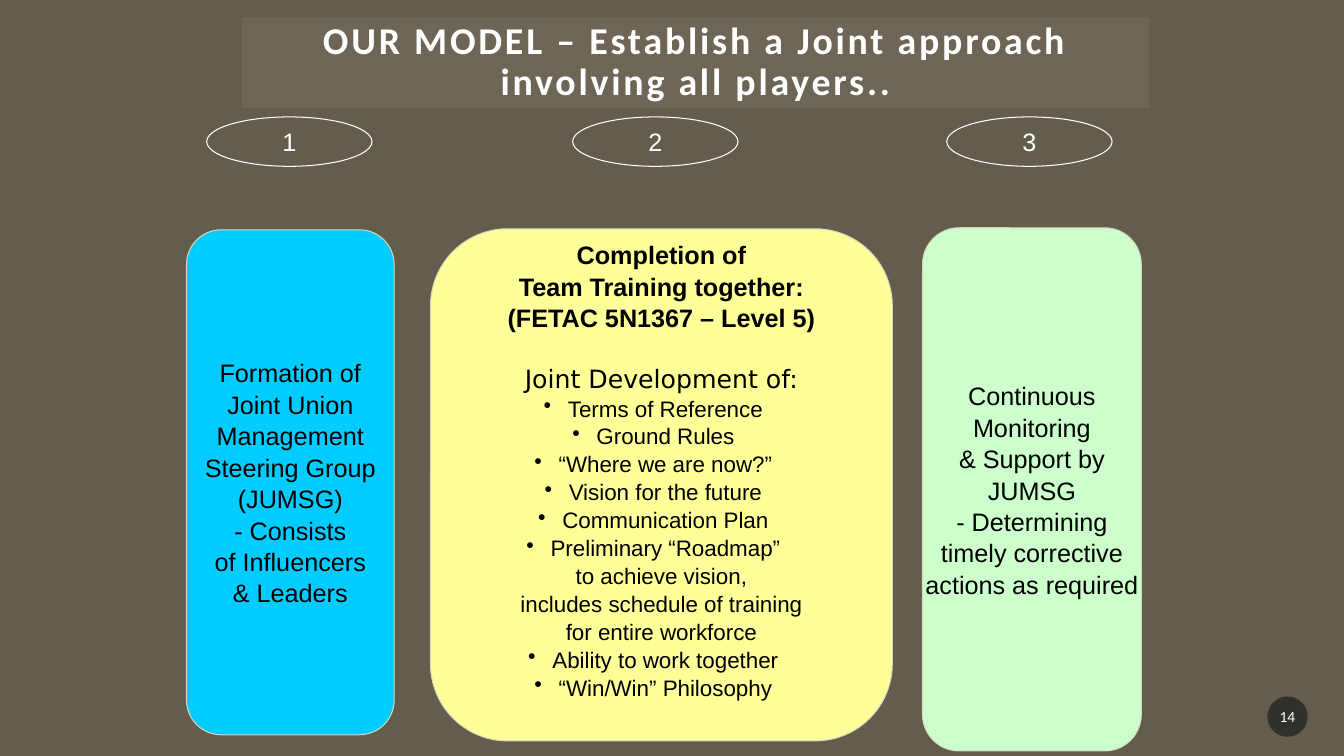
from lxml.etree import SubElement
from pptx import Presentation
from pptx.dml.color import RGBColor
from pptx.enum.shapes import MSO_SHAPE as Shape
from pptx.enum.text import MSO_ANCHOR as Anchor, MSO_AUTO_SIZE as AutoSize, PP_ALIGN as Align
from pptx.oxml.ns import qn
from pptx.util import Inches, Pt

OLIVE = RGBColor(0x63, 0x5D, 0x4D)
SAND = RGBColor(0xA7, 0xA0, 0x8E)
CREAM = RGBColor(0xD8, 0xD6, 0xBA)
BLUE = RGBColor(0x00, 0xCC, 0xFF)
YELLOW = RGBColor(0xFF, 0xFF, 0x99)
GREEN = RGBColor(0xCC, 0xFF, 0xCC)
CHARCOAL = RGBColor(0x1D, 0x1D, 0x1D)
WHITE = RGBColor(0xFF, 0xFF, 0xFF)
BLACK = RGBColor(0x00, 0x00, 0x00)

FORMATION = ["Formation of", "Joint Union", "Management", "Steering Group", "(JUMSG)",
             "- Consists", "of Influencers", "& Leaders"]
TRAINING = ["Completion of", "Team Training together:", "(FETAC 5N1367 – Level 5)"]
# Each topic is followed by the lines that continue it without a bullet
TOPICS = [
    ["Terms of Reference"],
    ["Ground Rules"],
    ["“Where we are now?”"],
    ["Vision for the future"],
    ["Communication Plan"],
    ["Preliminary “Roadmap”", "to achieve vision,", "includes schedule of training",
     "for entire workforce"],
    ["Ability to work together"],
    ["“Win/Win” Philosophy"],
]
MONITORING = ["Continuous", "Monitoring", "& Support by", "JUMSG", "- Determining",
              "timely corrective", "actions as required"]


def set_fill(shape, color, alpha=None):
    shape.fill.solid()
    shape.fill.fore_color.rgb = color
    if alpha is not None:
        tint = shape.fill._xPr.find(qn("a:solidFill"))[0]
        SubElement(tint, qn("a:alpha")).set("val", str(alpha * 1000))


def add_text(frame, text, size=18, font="Arial", color=BLACK, bold=False, bullet=False,
             before=0, line_spacing=1.04, tracking=None):
    """Write one centred paragraph, using the empty first one if it is free."""
    first = frame.paragraphs[0]
    para = frame.add_paragraph() if first.runs else first
    if bullet:
        properties = para._p.get_or_add_pPr()
        properties.set("marL", str(Inches(0.08)))
        properties.set("indent", str(Inches(-0.24)))
        SubElement(properties, qn("a:buChar")).set("char", "•")
    para.alignment = Align.CENTER
    para.line_spacing = line_spacing
    para.space_before = Pt(before)
    span = para.add_run()
    span.text = text
    span.font.size = Pt(size)
    span.font.name = font
    span.font.bold = bold
    span.font.color.rgb = color
    if tracking:
        span._r.get_or_add_rPr().set("spc", str(tracking * 100))


def add_panel(page, kind, box, fill, line=None, alpha=None):
    """Add a filled shape and return its text frame."""
    panel = page.shapes.add_shape(kind, *map(Inches, box))
    panel.shadow.inherit = False
    set_fill(panel, fill, alpha)
    if line is None:
        panel.line.fill.background()
    else:
        panel.line.color.rgb = line
        panel.line.width = Pt(0.75)
    frame = panel.text_frame
    frame.word_wrap = False
    frame.vertical_anchor = Anchor.MIDDLE
    return frame


def add_title(page, box):
    title = page.shapes.title
    title.left, title.top, title.width, title.height = map(Inches, box)
    set_fill(title, SAND, alpha=15)
    frame = title.text_frame
    frame.word_wrap = True
    frame.auto_size = AutoSize.NONE
    frame.vertical_anchor = Anchor.MIDDLE
    frame.margin_left = frame.margin_right = Inches(0.2)
    frame.margin_top = frame.margin_bottom = Inches(0.2)
    add_text(frame, "OUR MODEL – Establish a Joint approach involving all players..",
             size=27, font="Calibri", color=WHITE, bold=True, line_spacing=0.9, tracking=2)


def add_step_number(page, box, number):
    frame = add_panel(page, Shape.OVAL, box, OLIVE, WHITE)
    add_text(frame, str(number), color=WHITE, line_spacing=1)


def add_step(page, box, fill, lines):
    frame = add_panel(page, Shape.ROUNDED_RECTANGLE, box, fill, CREAM)
    for line in lines:
        add_text(frame, line)


def add_training_step(page, box):
    frame = add_panel(page, Shape.ROUNDED_RECTANGLE, box, YELLOW, CREAM)
    frame.margin_bottom = Inches(0.35)
    for line in TRAINING:
        add_text(frame, line, bold=True)
    add_text(frame, "Joint Development of:", font="DejaVu Sans", before=21)
    for topic in TOPICS:
        for index, line in enumerate(topic):
            add_text(frame, line, size=16, bullet=index == 0)


def add_page_number(page, box):
    frame = add_panel(page, Shape.OVAL, box, CHARCOAL, alpha=70)
    frame.margin_left = frame.margin_right = Inches(0.02)
    add_text(frame, "14", size=11, font="Calibri", color=WHITE, line_spacing=1)


def main():
    deck = Presentation()
    deck.slide_width, deck.slide_height = Inches(13.33), Inches(7.5)
    page = deck.slides.add_slide(deck.slide_layouts[5])
    page.background.fill.solid()
    page.background.fill.fore_color.rgb = OLIVE

    add_title(page, (2.4, 0.17, 9, 0.9))

    # Three steps of the model
    add_step(page, (1.85, 2.28, 2.06, 5.01), BLUE, FORMATION)
    add_training_step(page, (4.27, 2.27, 4.58, 5.08))
    add_step(page, (9.15, 2.26, 2.17, 5.19), GREEN, MONITORING)

    # Step numbers above them
    for number, left in enumerate((2.05, 5.68, 9.39), start=1):
        add_step_number(page, (left, 1.16, 1.64, 0.49), number)

    add_page_number(page, (12.57, 6.91, 0.4, 0.4))
    deck.save("out.pptx")


if __name__ == "__main__":
    main()
